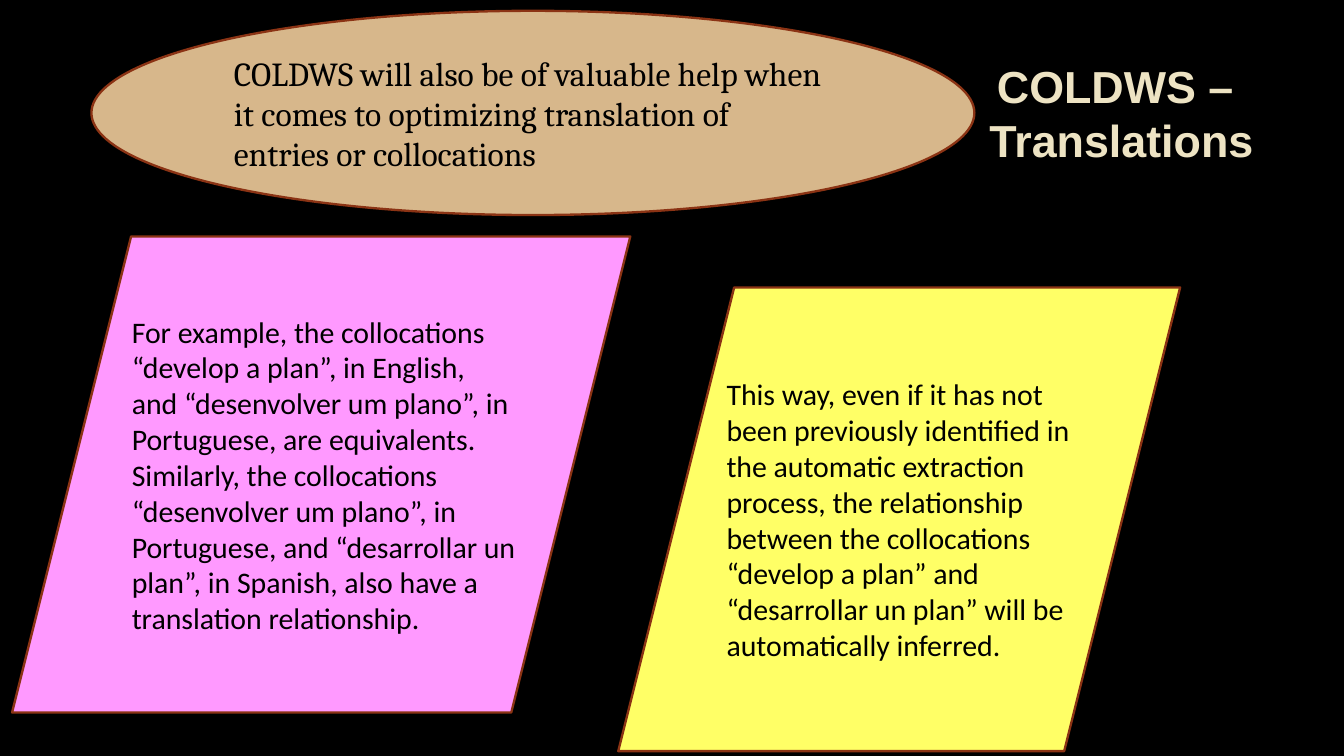
"""Build the slide on translations with COLDWS."""
from pptx import Presentation
from pptx.dml.color import RGBColor
from pptx.enum.shapes import MSO_SHAPE
from pptx.enum.text import MSO_ANCHOR, MSO_AUTO_SIZE, PP_ALIGN
from pptx.util import Pt

BLACK = RGBColor(0x00, 0x00, 0x00)
CREAM = RGBColor(0xED, 0xE3, 0xC3)
TAN = RGBColor(0xD7, 0xB7, 0x8B)
PINK = RGBColor(0xFF, 0x99, 0xFF)
YELLOW = RGBColor(0xFF, 0xFF, 0x66)
RUST = RGBColor(0x8B, 0x33, 0x14)

SUMMARY = (
    "COLDWS will also be of valuable help when it comes to "
    "optimizing translation of entries or collocations"
)
EXAMPLE = (
    "For example, the collocations “develop a plan”, in English, and "
    "“desenvolver um plano”, in Portuguese, are equivalents. Similarly, "
    "the collocations “desenvolver um plano”, in Portuguese, and "
    "“desarrollar un plan”, in Spanish, also have a translation relationship."
)
INFERENCE = (
    "This way, even if it has not been previously identified in the automatic "
    "extraction process, the relationship between the collocations “develop a "
    "plan” and “desarrollar un plan” will be automatically inferred."
)


def write_text(frame, text, *, font, size, color=BLACK, bold=False,
               align=PP_ALIGN.LEFT, left_inset=7.2):
    frame.word_wrap = True
    frame.auto_size = MSO_AUTO_SIZE.NONE
    frame.vertical_anchor = MSO_ANCHOR.MIDDLE
    frame.margin_left = Pt(left_inset)
    frame.text = text
    for para in frame.paragraphs:
        para.alignment = align
        for span in para.runs:
            span.font.name = font
            span.font.size = Pt(size)
            span.font.bold = bold
            span.font.color.rgb = color


class SlideBuilder:
    def __init__(self, deck, background, outline):
        self.outline = outline
        self.page = deck.slides.add_slide(deck.slide_layouts[5])
        self.page.background.fill.solid()
        self.page.background.fill.fore_color.rgb = background

    def title(self, text, left, top, width, height, **style):
        box = self.page.shapes.title
        box.left, box.top = Pt(left), Pt(top)
        box.width, box.height = Pt(width), Pt(height)
        write_text(box.text_frame, text, **style)

    def panel(self, kind, text, left, top, width, height, fill, **style):
        box = self.page.shapes.add_shape(
            kind, Pt(left), Pt(top), Pt(width), Pt(height))
        box.shadow.inherit = False
        box.fill.solid()
        box.fill.fore_color.rgb = fill
        box.line.color.rgb = self.outline
        box.line.width = Pt(1.25)
        write_text(box.text_frame, text, **style)


def main():
    deck = Presentation()
    deck.slide_width, deck.slide_height = Pt(720), Pt(405)
    builder = SlideBuilder(deck, BLACK, RUST)
    builder.title("COLDWS – \nTranslations", 424, 27.5, 353.5, 65.5,
                  font="Arial", size=24, color=CREAM, bold=True,
                  align=PP_ALIGN.CENTER)
    builder.panel(MSO_SHAPE.PARALLELOGRAM, EXAMPLE, 6.5, 126.7, 331.2, 255,
                  PINK, font="Calibri", size=16, left_inset=10)
    builder.panel(MSO_SHAPE.PARALLELOGRAM, INFERENCE, 331.2, 154, 301, 248.4,
                  YELLOW, font="Calibri", size=16)
    builder.panel(MSO_SHAPE.OVAL, SUMMARY, 49, 5.8, 473, 109.4,
                  TAN, font="Cambria", size=18)
    deck.save("out.pptx")


if __name__ == "__main__":
    main()
